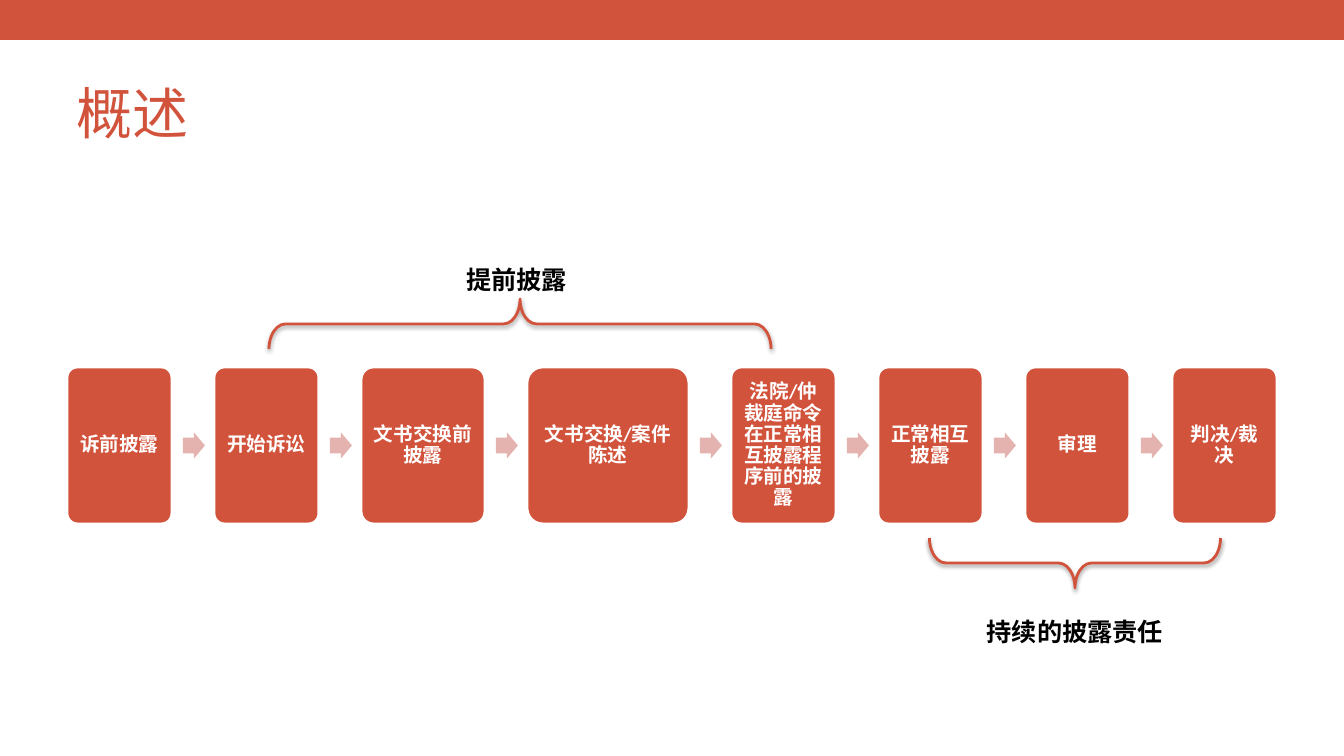
import pptx
import pptx.util
import pptx.dml.color
import pptx.enum.shapes
import pptx.enum.text
import pptx.oxml

# Content
TITLE = "概述"
STEPS = [  # text, width in px
    ("诉前披露", 105),
    ("开始诉讼", 105),
    ("文书交换前披露", 124),
    ("文书交换/案件陈述", 162),
    ("法院/仲裁庭命令在正常相互披露程序前的披露", 105),
    ("正常相互披露", 105),
    ("审理", 105),
    ("判决/裁决", 105),
]
BRACES = [  # centre x, centre y, length, rotation
    (520, 324, 502, 90),
    (1075, 563, 291, 270),
]
LABELS = [  # text, left, top, left inset, alignment
    ("提前披露", 371, 259, 95, "LEFT"),
    ("持续的披露责任", 901, 611, 5, "CENTER"),
]

# Style and layout, in px
RED, PINK, WHITE, BLACK = "D2533C", "E5B3AF", "FFFFFF", "000000"
FONT = "Calibri"
SLIDE_WIDTH, SLIDE_HEIGHT = 1344, 756
STEP_LEFT, STEP_TOP, STEP_HEIGHT, STEP_GAP = 67, 367, 157, 42
ARROW_OFFSET, ARROW_WIDTH, ARROW_HEIGHT = 11, 22, 26
BRACE_DEPTH = 50
SHADOW = (
    '<a:effectLst xmlns:a="http://schemas.openxmlformats.org/drawingml/2006/main">'
    '<a:outerShdw blurRad="38100" dist="20320" dir="5400000" rotWithShape="0">'
    '<a:srgbClr val="000000"><a:alpha val="38000"/></a:srgbClr>'
    '</a:outerShdw></a:effectLst>'
)
SHAPES = pptx.enum.shapes.MSO_SHAPE
ALIGN = pptx.enum.text.PP_ALIGN
ANCHOR = pptx.enum.text.MSO_ANCHOR


def px(length):
    return pptx.util.Emu(round(length * 914400 / 100.8))


def color(value):
    return pptx.dml.color.RGBColor.from_string(value)


def add_shape(slide, kind, box, fill=None, line=None, line_width=2, adjustments=()):
    shape = slide.shapes.add_shape(kind, *map(px, box))
    shape.shadow.inherit = False
    for index, value in enumerate(adjustments):
        shape.adjustments[index] = value
    if fill:
        shape.fill.solid()
        shape.fill.fore_color.rgb = color(fill)
    else:
        shape.fill.background()
    if line:
        shape.line.color.rgb = color(line)
        shape.line.width = pptx.util.Pt(line_width)
    else:
        shape.line.fill.background()
    return shape


def write(shape, text, size, font_color, insets, align=ALIGN.LEFT, anchor=ANCHOR.TOP, bold=False):
    frame = shape.text_frame
    frame.word_wrap = True
    frame.vertical_anchor = anchor
    frame.margin_left, frame.margin_top, frame.margin_right, frame.margin_bottom = map(px, insets)
    frame.text = text
    paragraph = frame.paragraphs[0]
    paragraph.alignment = align
    font = paragraph.runs[0].font
    font.name = FONT
    font.size = pptx.util.Pt(size)
    font.bold = bold
    font.color.rgb = color(font_color)
    return paragraph


def add_label(slide, box, *style, **options):
    write(slide.shapes.add_textbox(*map(px, box)), *style, **options)


def main():
    presentation = pptx.Presentation()
    presentation.slide_width = px(SLIDE_WIDTH)
    presentation.slide_height = px(SLIDE_HEIGHT)
    slide = presentation.slides.add_slide(presentation.slide_layouts[6])

    # Top band and title
    add_shape(slide, SHAPES.RECTANGLE, (0, 0, SLIDE_WIDTH, 40), RED)
    add_label(slide, (67, 58, 1210, 109), TITLE, 40, RED, (10, 5, 10, 5), anchor=ANCHOR.MIDDLE)

    # Process steps with an arrow in each gap
    left = STEP_LEFT
    arrow_top = STEP_TOP + (STEP_HEIGHT - ARROW_HEIGHT) / 2
    for index, (text, width) in enumerate(STEPS):
        step = add_shape(slide, SHAPES.ROUNDED_RECTANGLE, (left, STEP_TOP, width, STEP_HEIGHT),
                         RED, WHITE, 2.08, (0.1,))
        paragraph = write(step, text, 14, WHITE, (6, 6, 6, 6), ALIGN.CENTER, ANCHOR.MIDDLE, True)
        paragraph.line_spacing = 0.9
        if index < len(STEPS) - 1:
            add_shape(slide, SHAPES.RIGHT_ARROW,
                      (left + width + ARROW_OFFSET, arrow_top, ARROW_WIDTH, ARROW_HEIGHT),
                      PINK, adjustments=(0.6, 0.5))
        left += width + STEP_GAP

    # Braces, turned to lie above and below the steps
    for center_x, center_y, length, rotation in BRACES:
        box = (center_x - BRACE_DEPTH / 2, center_y - length / 2, BRACE_DEPTH, length)
        brace = add_shape(slide, SHAPES.LEFT_BRACE, box, line=RED, adjustments=(0.33, 0.5))
        brace.rotation = rotation
        properties = brace.element.spPr
        properties.replace(properties.find(pptx.oxml.ns.qn("a:effectLst")),
                           pptx.oxml.parse_xml(SHADOW))

    # Brace labels
    for text, label_left, top, inset, align in LABELS:
        add_label(slide, (label_left, top, 348, 40), text, 18, BLACK, (inset, 5, 5, 5),
                  align=ALIGN[align], bold=True)

    presentation.save("out.pptx")


if __name__ == "__main__":
    main()
